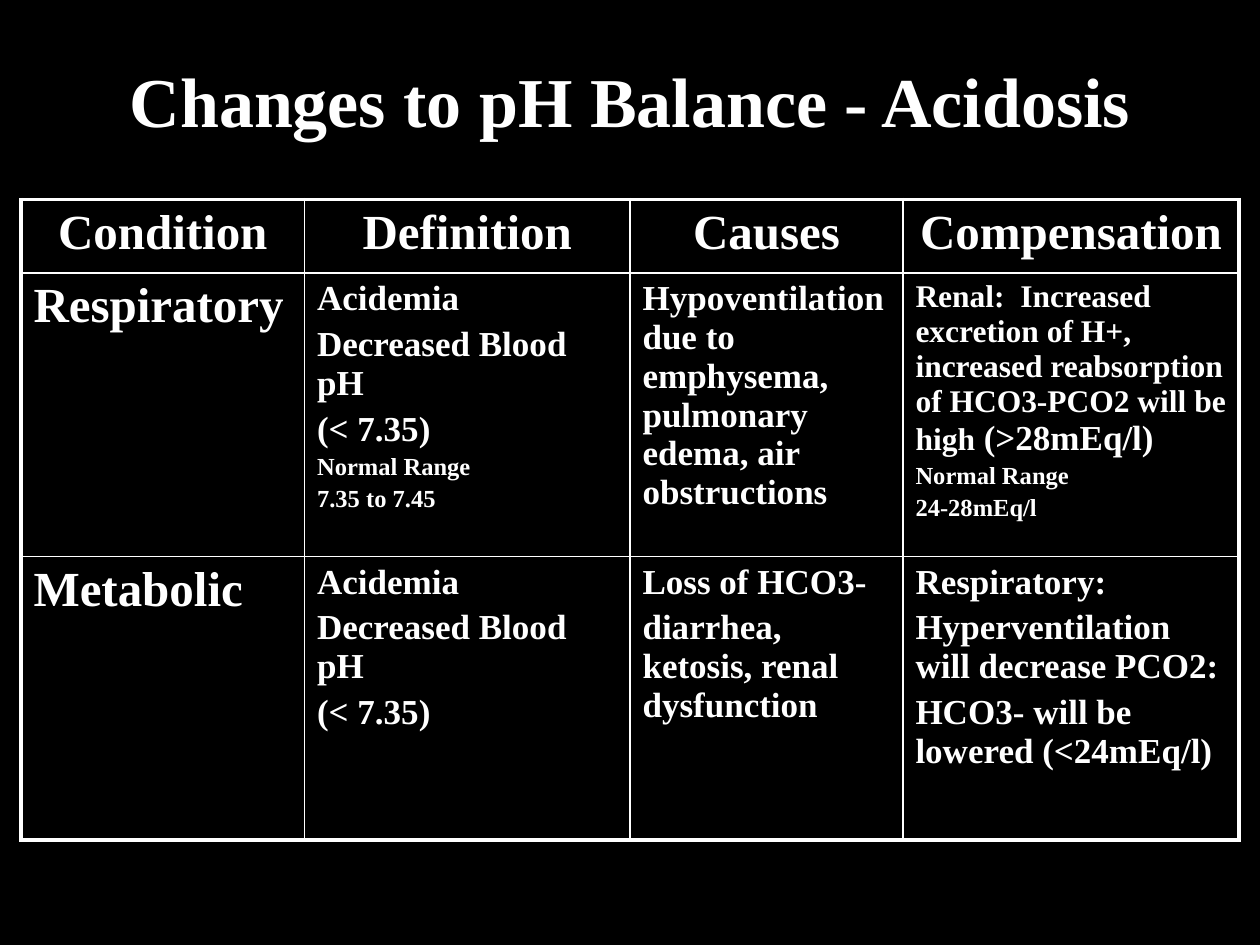
from lxml import etree
from pptx import Presentation
from pptx.dml import color
from pptx.enum import text
from pptx.oxml import ns
from pptx.util import Pt

FONT = "Times New Roman"
WHITE, BLACK = "FFFFFF", "000000"
THIN, THICK = 1, 2.25
COLUMNS = [162, 186, 156, 192]
ROWS = [42, 162, 162]
ACIDEMIA = [("Acidemia", 20), ("Decreased Blood pH", 20), ("(< 7.35)", 20)]

CONTENT = [
    [[(name, 28)] for name in ("Condition", "Definition", "Causes", "Compensation")],
    [
        [("Respiratory", 28)],
        ACIDEMIA + [("Normal Range", 14), ("7.35 to 7.45", 14)],
        [("Hypoventilation due to emphysema, pulmonary edema, air obstructions", 20)],
        [
            ("Renal:  Increased excretion of H+, increased reabsorption "
             "of HCO3-PCO2 will be high", 18, " (>28mEq/l)", 20),
            ("Normal Range", 14),
            ("24-28mEq/l", 14),
        ],
    ],
    [
        [("Metabolic", 28)],
        ACIDEMIA,
        [("Loss of HCO3-", 20), ("diarrhea, ketosis, renal dysfunction", 20)],
        [
            ("Respiratory:", 20),
            ("Hyperventilation will decrease PCO2:", 20),
            ("HCO3- will be lowered (<24mEq/l)", 20),
        ],
    ],
]


def paint(target, value):
    target.solid()
    target.fore_color.rgb = color.RGBColor.from_string(value)


def add_span(para, words, size):
    span = para.add_run()
    span.text = words
    for name, value in {"name": FONT, "size": Pt(size), "bold": True}.items():
        setattr(span.font, name, value)
    paint(span.font.fill, WHITE)


def add_title(page, words):
    box = page.shapes.title
    place = {"left": 54, "top": 18, "width": 612, "height": 78}
    for name, value in place.items():
        setattr(box, name, Pt(value))
    box.text_frame.vertical_anchor = text.MSO_ANCHOR.MIDDLE
    para = box.text_frame.paragraphs[0]
    para.alignment = text.PP_ALIGN.CENTER
    add_span(para, words, 40)


def set_borders(cell, widths):
    properties = cell._tc.get_or_add_tcPr()
    for side, width in widths.items():
        line = etree.SubElement(properties, ns.qn(f"a:ln{side}"), w=str(Pt(width)))
        fill = etree.SubElement(line, ns.qn("a:solidFill"))
        etree.SubElement(fill, ns.qn("a:srgbClr"), val=WHITE)


def fill_cell(cell, paragraphs, alignment):
    frame = cell.text_frame
    for index, spans in enumerate(paragraphs):
        para = frame.add_paragraph() if index else frame.paragraphs[0]
        para.alignment = alignment
        para.space_before = Pt(0.2 * max(spans[1::2]))
        for words, size in zip(spans[::2], spans[1::2]):
            add_span(para, words, size)


def add_grid(page):
    table = page.shapes.add_table(
        len(ROWS), len(COLUMNS), Pt(12), Pt(114), Pt(sum(COLUMNS)), Pt(sum(ROWS))
    ).table
    table.first_row = table.horz_banding = False
    for column, width in zip(table.columns, COLUMNS):
        column.width = Pt(width)
    for row, height in zip(table.rows, ROWS):
        row.height = Pt(height)
    last_row, last_column = len(ROWS) - 1, len(COLUMNS) - 1
    for r, row in enumerate(CONTENT):
        alignment = text.PP_ALIGN.LEFT if r else text.PP_ALIGN.CENTER
        for c, paragraphs in enumerate(row):
            cell = table.cell(r, c)
            outer = {"L": c == 0, "R": c == last_column, "T": r == 0, "B": r == last_row}
            set_borders(cell, {side: THICK if edge else THIN for side, edge in outer.items()})
            paint(cell.fill, BLACK)
            fill_cell(cell, paragraphs, alignment)


def main():
    deck = Presentation()
    deck.slide_width, deck.slide_height = Pt(720), Pt(540)
    page = deck.slides.add_slide(deck.slide_layouts[5])
    paint(page.background.fill, BLACK)
    add_title(page, "Changes to pH Balance - Acidosis")
    add_grid(page)
    deck.save("out.pptx")


if __name__ == "__main__":
    main()
